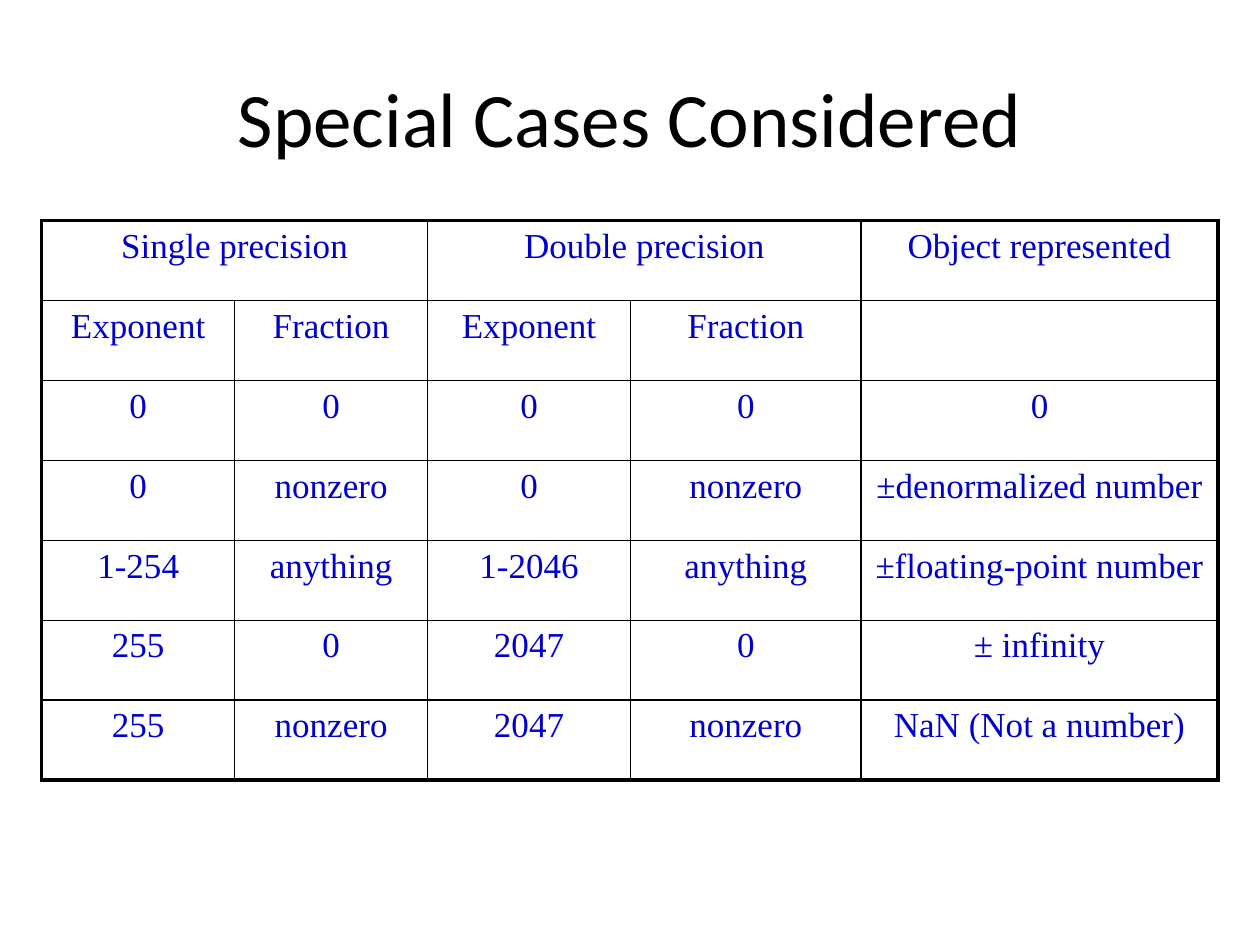
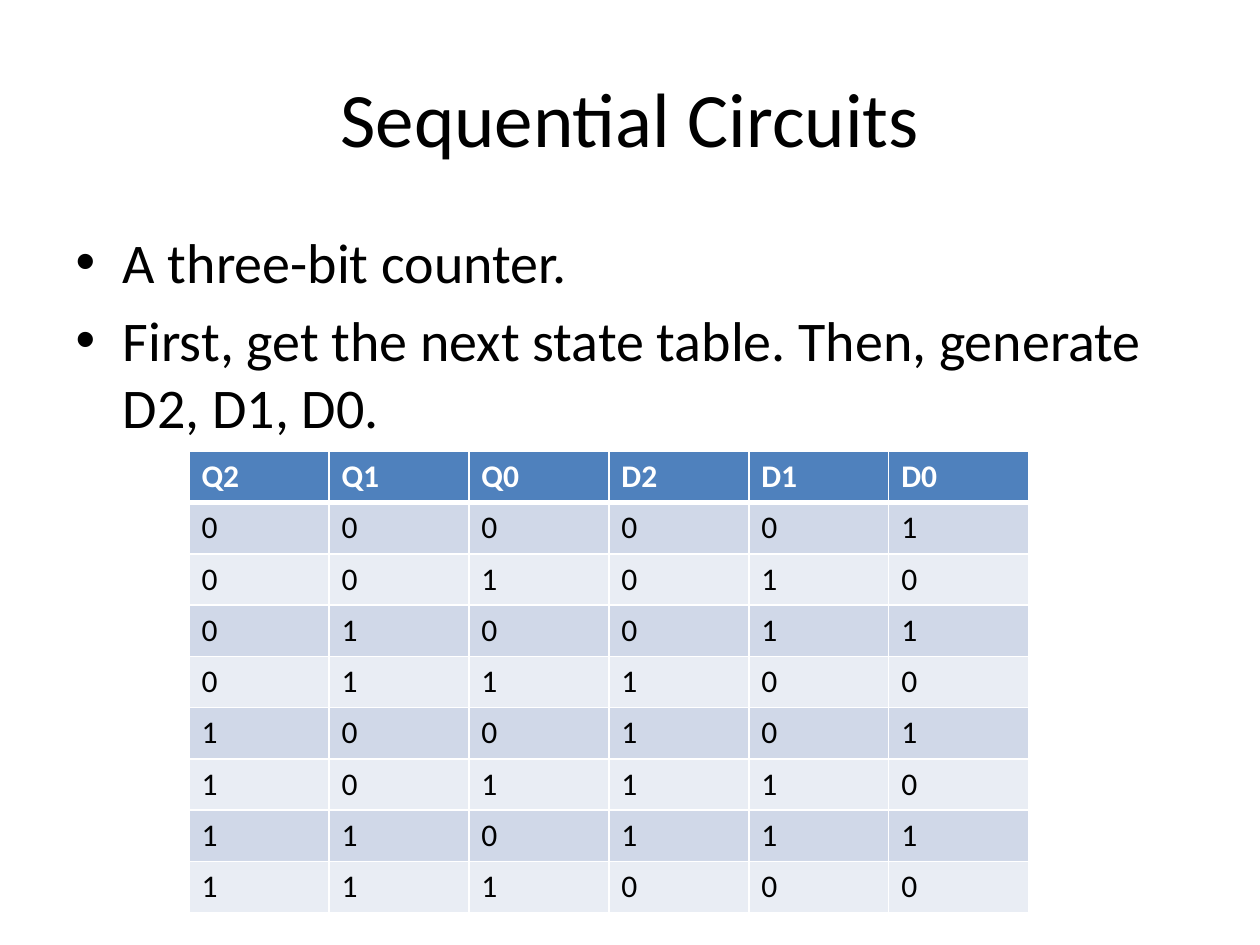
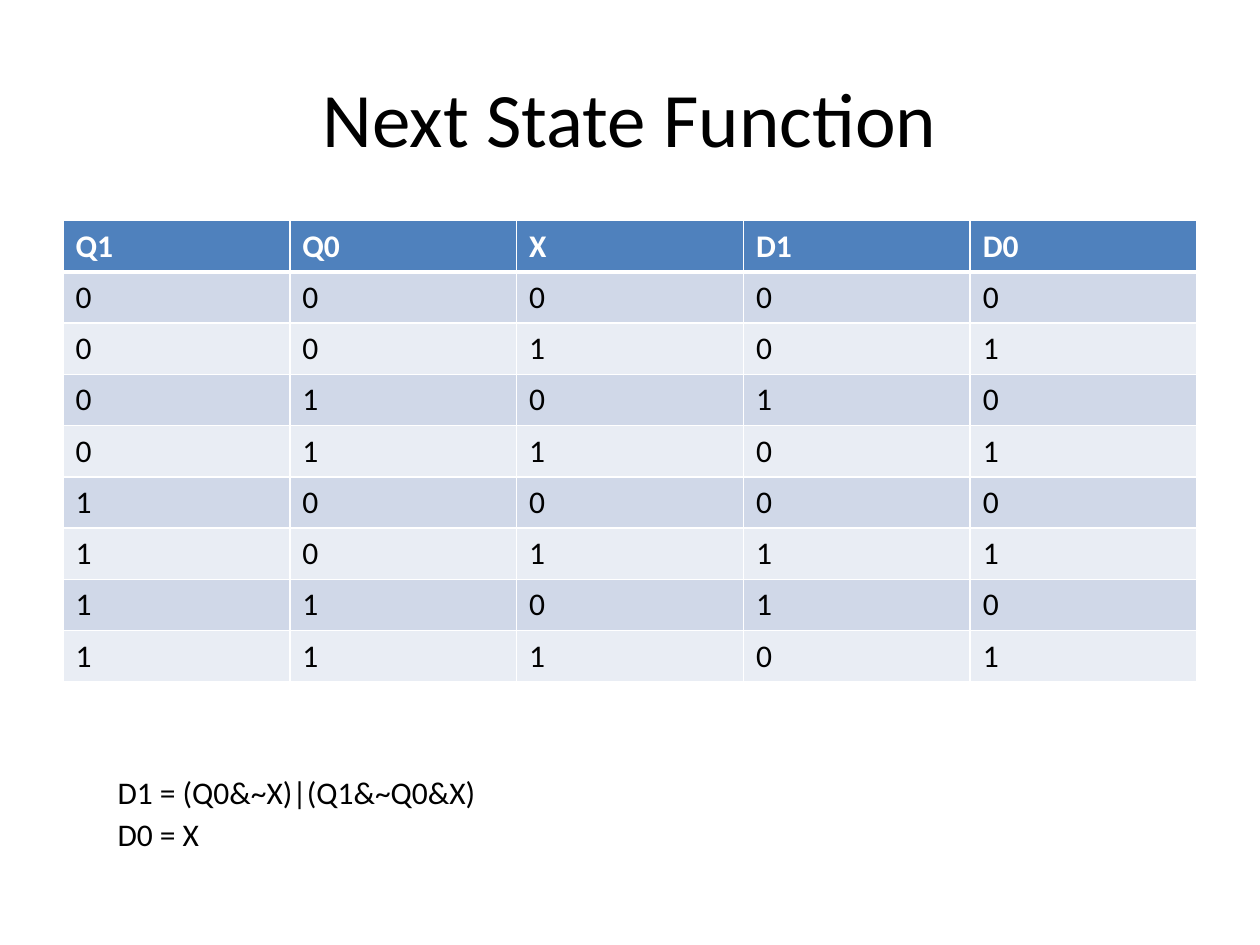
from lxml import etree
from pptx import Presentation
from pptx import util as u
from pptx.dml.color import RGBColor
from pptx.enum import text as t
from pptx.oxml.ns import qn

SANS, SERIF = "Calibri", "Times New Roman"
BLACK, WHITE, BLUE = "000000", "FFFFFF", "0000CC"
HEAD, BANDS = "4F81BD", ("D0D8E8", "E9EDF4")
TITLE_BOX = (1.27, 0.76, 22.86, 3.18)
BODY_BOX = (1.27, 4.45, 22.86, 12.57)
TITLE = {"size": u.Pt(44), "name": SANS}
BODY = {"size": u.Pt(32), "name": SANS}
PLAIN = {"size": u.Pt(18), "name": SANS, "bold": False}
BOLD = {**PLAIN, "bold": True}
CASE = {"size": u.Pt(20), "name": SERIF, "bold": False}

CASES = [
    ["Single precision", "", "Double precision", "", "Object represented"],
    ["Exponent", "Fraction", "Exponent", "Fraction", ""],
    ["0", "0", "0", "0", "0"],
    ["0", "nonzero", "0", "nonzero", "±denormalized number"],
    ["1-254", "anything", "1-2046", "anything", "±floating-point number"],
    ["255", "0", "2047", "0", "± infinity"],
    ["255", "nonzero", "2047", "nonzero", "NaN (Not a number)"],
]
COUNTER = ["Q2 Q1 Q0 D2 D1 D0", "0 0 0 0 0 1", "0 0 1 0 1 0", "0 1 0 0 1 1",
           "0 1 1 1 0 0", "1 0 0 1 0 1", "1 0 1 1 1 0", "1 1 0 1 1 1",
           "1 1 1 0 0 0"]
NEXT = ["Q1 Q0 X D1 D0", "0 0 0 0 0", "0 0 1 0 1", "0 1 0 1 0", "0 1 1 0 1",
        "1 0 0 0 0", "1 0 1 1 1", "1 1 0 1 0", "1 1 1 0 1"]


def rgb(code):
    return RGBColor.from_string(code)


def write(par, words, form, color=BLACK):
    run = par.add_run()
    run.text = words
    for key, value in form.items():
        setattr(run.font, key, value)
    run.font.color.rgb = rgb(color)


def place(shape, box):
    shape.left, shape.top, shape.width, shape.height = map(u.Cm, box)


def add_slide(deck, layout, title):
    slide = deck.slides.add_slide(deck.slide_layouts[layout])
    head = slide.shapes.title
    place(head, TITLE_BOX)
    head.text_frame.vertical_anchor = t.MSO_ANCHOR.MIDDLE
    par = head.text_frame.paragraphs[0]
    par.alignment = t.PP_ALIGN.CENTER
    write(par, title, TITLE)
    return slide


def add_points(slide, points):
    body = slide.placeholders[1]
    place(body, BODY_BOX)
    frame = body.text_frame
    for i, point in enumerate(points):
        par = frame.add_paragraph() if i else frame.paragraphs[0]
        write(par, point, BODY)


def add_note(slide, box, words):
    note = slide.shapes.add_textbox(*map(u.Cm, box))
    frame = note.text_frame
    frame.word_wrap = False
    frame.auto_size = t.MSO_AUTO_SIZE.SHAPE_TO_FIT_TEXT
    write(frame.paragraphs[0], words, PLAIN)


def set_edges(cell, color, widths):
    """Draw the left, right, top and bottom borders, in points."""
    props = cell._tc.get_or_add_tcPr()
    for side, width in zip("LRTB", widths):
        line = etree.SubElement(props, qn(f"a:ln{side}"), w=str(u.Pt(width)))
        fill = etree.SubElement(line, qn("a:solidFill"))
        etree.SubElement(fill, qn("a:srgbClr"), val=color)


def add_grid(slide, box, rows):
    """Add a table without style bands, its rows and columns equal."""
    frame = slide.shapes.add_table(len(rows), len(rows[0]), *map(u.Cm, box))
    table = frame.table
    table.first_row = table.horz_banding = False
    return table


def add_cases(slide):
    table = add_grid(slide, (0.84, 4.45, 23.7, 11.28), CASES)
    for col, width in zip(table.columns, (3.89, 3.89, 4.09, 4.65, 7.19)):
        col.width = u.Cm(width)
    last_row, last_col = len(CASES) - 1, len(CASES[0]) - 1
    for r, row in enumerate(CASES):
        for c, words in enumerate(row):
            cell = table.cell(r, c)
            outer = (c == 0, c == last_col, r == 0, r == last_row)
            set_edges(cell, BLACK, [2.25 if edge else 1 for edge in outer])
            cell.fill.background()
            if words:
                par = cell.text_frame.paragraphs[0]
                par.alignment = t.PP_ALIGN.CENTER
                write(par, words, CASE, BLUE)
    for c in (0, 2):
        table.cell(0, c).merge(table.cell(0, c + 1))


def add_states(slide, box, lines):
    rows = [line.split() for line in lines]
    table = add_grid(slide, box, rows)
    for r, row in enumerate(rows):
        for c, words in enumerate(row):
            cell = table.cell(r, c)
            set_edges(cell, WHITE, (1, 1, 3 if r == 1 else 1, 3 if r == 0 else 1))
            cell.fill.solid()
            cell.fill.fore_color.rgb = rgb(BANDS[(r - 1) % 2] if r else HEAD)
            form, color = (PLAIN, BLACK) if r else (BOLD, WHITE)
            write(cell.text_frame.paragraphs[0], words, form, color)


def main():
    deck = Presentation()
    deck.slide_width, deck.slide_height = u.Cm(25.4), u.Cm(19.05)

    add_cases(add_slide(deck, 5, "Special Cases Considered"))

    slide = add_slide(deck, 1, "Sequential Circuits")
    add_points(slide, [
        "A three-bit counter.",
        "First, get the next state table. Then, generate D2, D1, D0.",
    ])
    add_states(slide, (3.81, 9.1, 16.93, 9.3), COUNTER)

    slide = add_slide(deck, 5, "Next State Function")
    add_states(slide, (1.27, 4.45, 22.86, 9.3), NEXT)
    add_note(slide, (2.12, 15.45, 7.82, 1.03), "D1 = (Q0&~X)|(Q1&~Q0&X)")
    add_note(slide, (2.12, 16.3, 2.34, 1.03), "D0 = X")

    deck.save("out.pptx")


if __name__ == "__main__":
    main()
